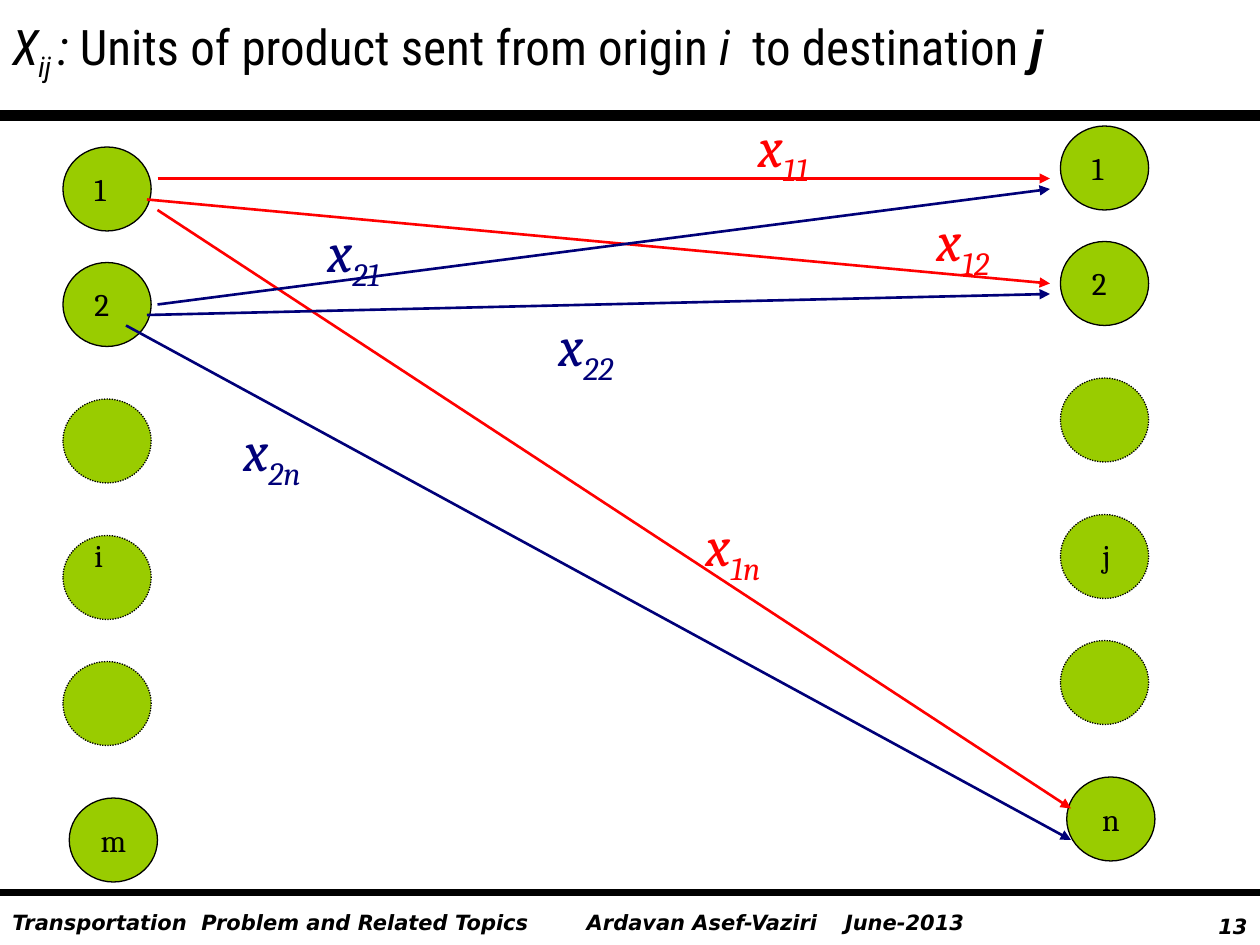
from lxml import etree
from pptx import Presentation
from pptx.dml.color import RGBColor as Rgb
from pptx.enum.dml import MSO_LINE as Dash
from pptx.enum.shapes import MSO_CONNECTOR as Wire, MSO_SHAPE as Form
from pptx.enum.text import MSO_ANCHOR as Anchor, PP_ALIGN as Align
from pptx.oxml.ns import qn
from pptx.util import Inches, Pt

deck = Presentation()
deck.slide_width, deck.slide_height = Inches(10), Inches(7.5)
slide = deck.slides.add_slide(deck.slide_layouts[6])
shapes = slide.shapes
cell = deck.slide_width // 120
black, red, navy, green = "000000", "FF0000", "000078", "99CC00"


def write(frame, runs, size, face, hue=black, bold=None, slant=None):
    para = frame.paragraphs[0]
    font = para.font
    font.size, font.name, font.bold, font.italic = Pt(size), face, bold, slant
    font.color.rgb = Rgb.from_string(hue)
    for text, low in runs:
        run = para.add_run()
        run.text = text
        if low:
            run.font._element.set("baseline", "-25000")
    return para


def join(start, end, hue, width, arrow=False):
    wire = shapes.add_connector(Wire.STRAIGHT, *(int(n * cell) for n in start + end))
    wire.line.color.rgb = Rgb.from_string(hue)
    wire.line.width = Pt(width)
    if arrow:
        etree.SubElement(wire.line._get_or_add_ln(), qn("a:tailEnd"), type="triangle")
    etree.SubElement(wire._element.spPr, qn("a:effectLst"))


for text, left, top, wide in [
    ("Transportation  Problem and Related Topics", 0, 86, 56),
    ("Ardavan Asef-Vaziri\tJune-2013", 54.7, 86, 40.2),
    ("13", 111, 86.4, 9),
]:
    box = shapes.add_textbox(int(left * cell), int(top * cell), int(wide * cell), int(3.6 * cell))
    box.text_frame.word_wrap = True
    para = write(box.text_frame, [(text, False)], 12, "DejaVu Sans", bold=True, slant=True)
    if text == "13":
        para.alignment = Align.RIGHT
    if "\t" in text:
        tabs = etree.SubElement(para._p.get_or_add_pPr(), qn("a:tabLst"))
        etree.SubElement(tabs, qn("a:tab"), pos=str(int(24.6 * cell)), algn="l")
        props = para._p.pPr
        props.insert(0, tabs)

join((0, 11), (120, 11), black, 6)
join((0, 85), (120, 85), black, 4.5)

title = shapes.add_textbox(0, cell, 120 * cell, int(6.9 * cell))
title.text_frame.word_wrap = True
para = write(
    title.text_frame,
    [("X", False), ("ij ", True), (": ", False), ("Units of product sent from origin", False),
     (" i  ", False), ("to destination ", False), ("j", False)],
    28, "Roboto Condensed")
for run, slant in zip(para.runs, [True, True, True, False, True, False, True]):
    run.font.italic = slant
para.runs[-1].font.name = "Arial"
para.runs[-1].font.bold = True

rows = [14, 25, 38, 51, 63, 76]
sides = [
    (6, 0, ["1", "2", "", "i", "", "m"], {"i": (1.8, -0.5)}),
    (101, -2, ["1", "2", "", "j", "", "n"], {"j": (2.8, 1.5)}),
]
for col, lift, names, shift in sides:
    for row, name in zip(rows, names):
        last = row == rows[-1]
        left = col + 0.6 * last
        top = row + lift
        node = shapes.add_shape(Form.OVAL, int(left * cell), top * cell, int(8.4 * cell), 8 * cell)
        node.shadow.inherit = False
        node.fill.solid()
        node.fill.fore_color.rgb = Rgb.from_string(green)
        node.line.color.rgb = Rgb.from_string(black)
        node.line.width = Pt(0.75)
        if row in rows[2:5]:
            node.line.dash_style = Dash.ROUND_DOT
        if last:
            frame = node.text_frame
            frame.word_wrap = False
            frame.vertical_anchor = Anchor.MIDDLE
            write(frame, [(name, False)], 18, "Cambria").alignment = Align.CENTER
        elif name:
            right, down = shift.get(name, (1.8, 1.6))
            box = shapes.add_textbox(
                int((left + right) * cell), int((top + down) * cell), 4 * cell, int(4.8 * cell))
            box.text_frame.word_wrap = True
            write(box.text_frame, [(name, False)], 18, "Cambria")

flows = [
    ("11", red, (15, 17), (100, 17), (71, 10)),
    ("12", red, (14, 19), (100, 27), (88, 19)),
    ("1n", red, (15, 20), (102, 77), (66, 48)),
    ("21", navy, (15, 29), (100, 18), (30, 20)),
    ("22", navy, (14, 30), (100, 28), (52, 29)),
    ("2n", navy, (12, 31), (102, 80), (22, 39)),
]
for pair, hue, start, end, (left, top) in flows:
    join(start, end, hue, 1.5, True)
    box = shapes.add_textbox(left * cell, top * cell, 10 * cell, int(7.7 * cell))
    box.text_frame.word_wrap = True
    write(box.text_frame, [("x", False), (pair, True)], 32, "Cambria", hue, slant=True)

deck.save("out.pptx")
